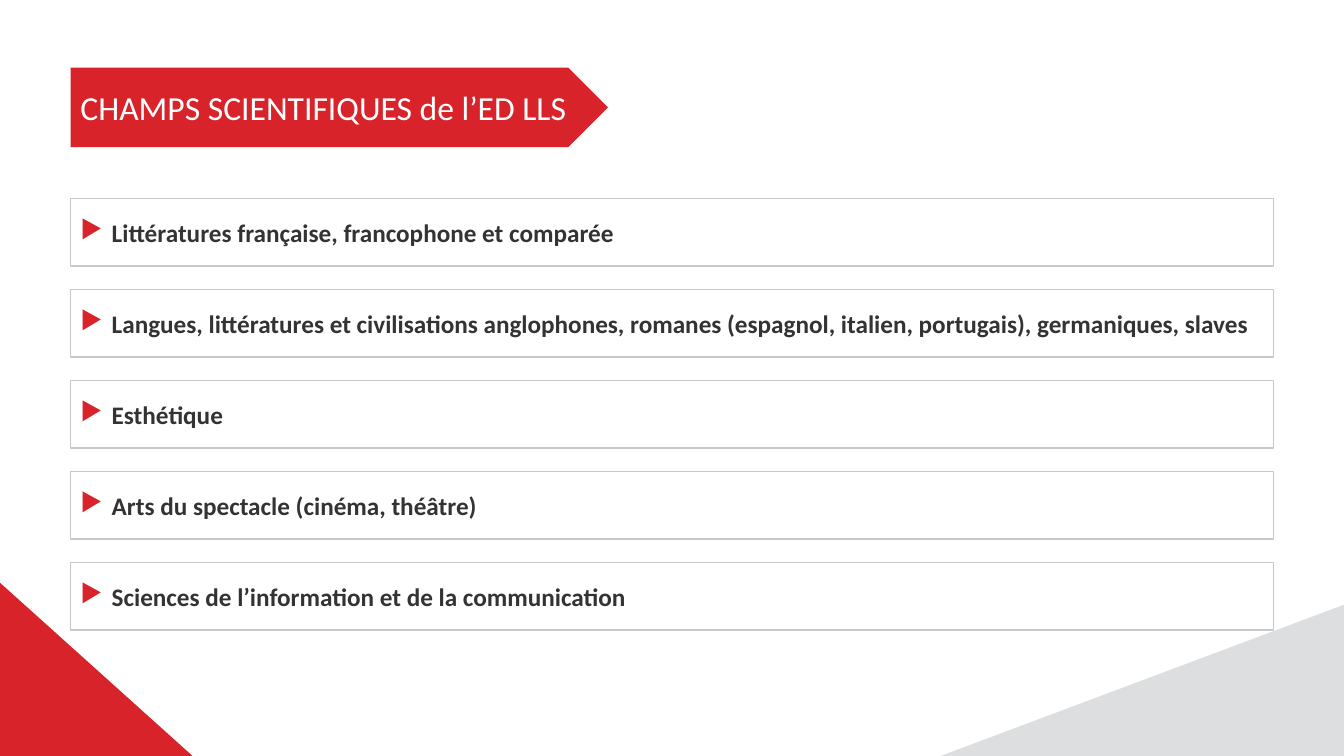
from lxml.etree import SubElement
from pptx import Presentation
from pptx.dml.color import RGBColor
from pptx.enum.shapes import MSO_SHAPE as SHAPE
from pptx.enum.text import MSO_ANCHOR as ANCHOR, PP_ALIGN as ALIGN
from pptx.oxml.ns import qn
from pptx.util import Inches, Pt

TITLE = "CHAMPS SCIENTIFIQUES de l’ED LLS"
FIELDS = [
    "Littératures française, francophone et comparée",
    "Langues, littératures et civilisations anglophones, romanes "
    "(espagnol, italien, portugais), germaniques, slaves",
    "Esthétique",
    "Arts du spectacle (cinéma, théâtre)",
    "Sciences de l’information et de la communication",
]
COLORS = {"red": "D8232A", "gray": "DCDEE0", "border": "C6C9CC",
          "text": "333333", "white": "FFFFFF"}
FONT = "Calibri"
SLIDE_W, SLIDE_H = 13.33, 7.5
LEFT = 0.7
FIELD_TOP, FIELD_W, FIELD_H, FIELD_STEP = 1.97, 11.93, 0.67, 0.903
INDENT = 0.31


def rgb(name):
    return RGBColor.from_string(COLORS[name])


def add_box(slide, kind, left, top, width, height, fill=None, line=None):
    sp = slide.shapes.add_shape(
        kind, Inches(left), Inches(top), Inches(width), Inches(height))
    sp.shadow.inherit = False
    if fill:
        sp.fill.solid()
        sp.fill.fore_color.rgb = rgb(fill)
    else:
        sp.fill.background()
    if line:
        sp.line.color.rgb = rgb(line)
        sp.line.width = Pt(1)
    else:
        sp.line.fill.background()
    return sp


def add_bullet(p, char, color):
    """Give the paragraph a hanging indent and a coloured bullet."""
    pPr = p._p.get_or_add_pPr()
    pPr.set("marL", str(Inches(INDENT)))
    pPr.set("indent", str(-Inches(INDENT)))
    SubElement(SubElement(pPr, qn("a:buClr")), qn("a:srgbClr"), val=COLORS[color])
    SubElement(pPr, qn("a:buChar"), char=char)


def write(sp, text, size, color, bold=False, align=ALIGN.LEFT, bullet=None):
    tf = sp.text_frame
    tf.word_wrap = True
    tf.vertical_anchor = ANCHOR.MIDDLE
    p = tf.paragraphs[0]
    p.alignment = align
    if bullet:
        add_bullet(p, bullet, "red")
    r = p.add_run()
    r.text = text
    r.font.name = FONT
    r.font.size = Pt(size)
    r.font.bold = bold
    r.font.color.rgb = rgb(color)


def main():
    prs = Presentation()
    prs.slide_width, prs.slide_height = Inches(SLIDE_W), Inches(SLIDE_H)
    slide = prs.slides.add_slide(prs.slide_layouts[6])

    add_box(slide, SHAPE.RIGHT_TRIANGLE, 0, 5.79, 1.9, 1.71, "red", "red")
    gray_corner = add_box(slide, SHAPE.RIGHT_TRIANGLE, 9.33, 6, 4, 1.5, "gray")
    gray_corner.element.spPr.find(qn("a:xfrm")).set("flipH", "1")

    banner = add_box(slide, SHAPE.PENTAGON, LEFT, 0.67, 5.33, 0.79, "red")
    write(banner, TITLE, size=24, color="white")

    for i, field in enumerate(FIELDS):
        box = add_box(slide, SHAPE.RECTANGLE, LEFT, FIELD_TOP + i * FIELD_STEP,
                      FIELD_W, FIELD_H, line="border")
        write(box, field, size=18, color="text", bold=True,
              align=ALIGN.JUSTIFY, bullet="▶")

    prs.save("out.pptx")


if __name__ == "__main__":
    main()
